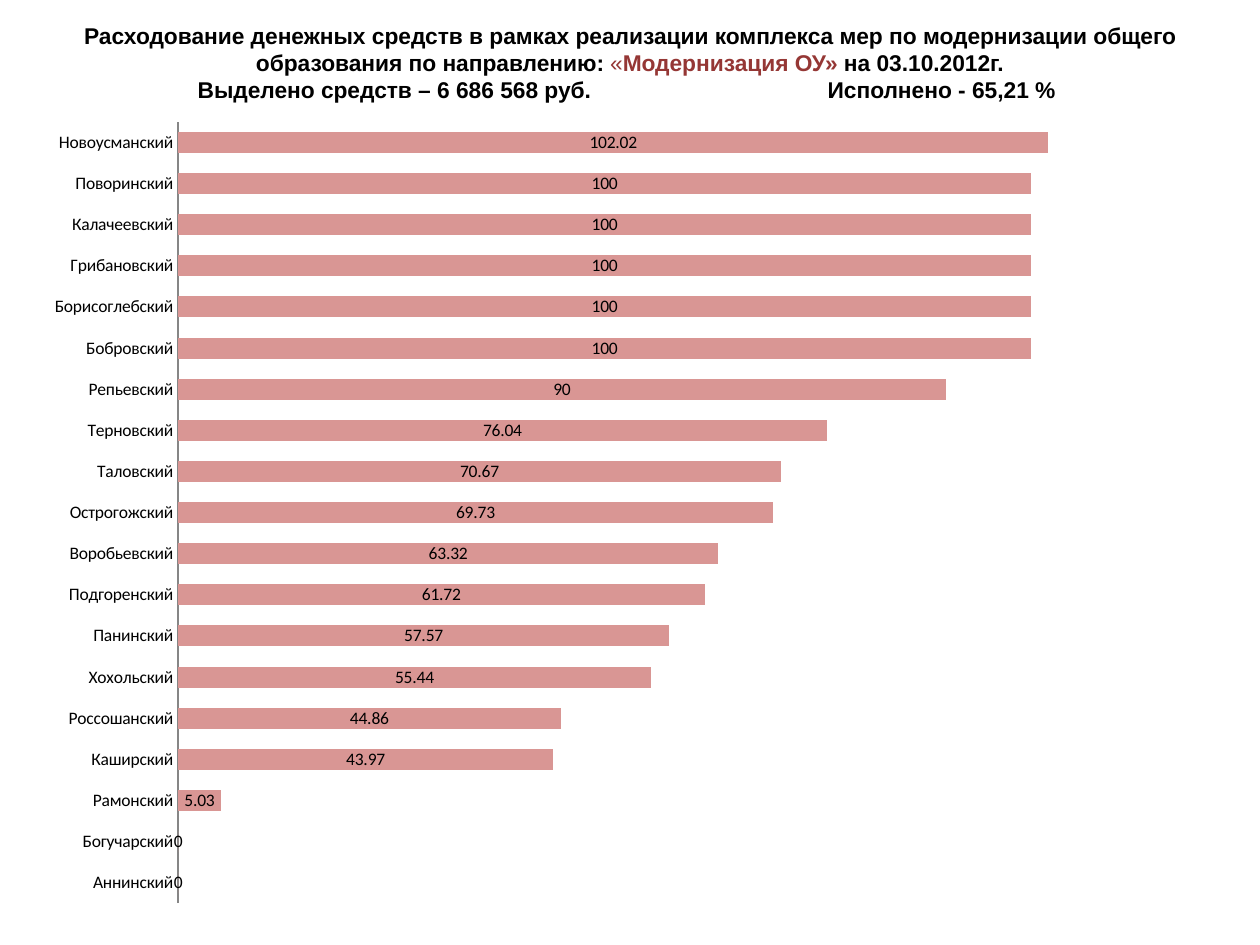
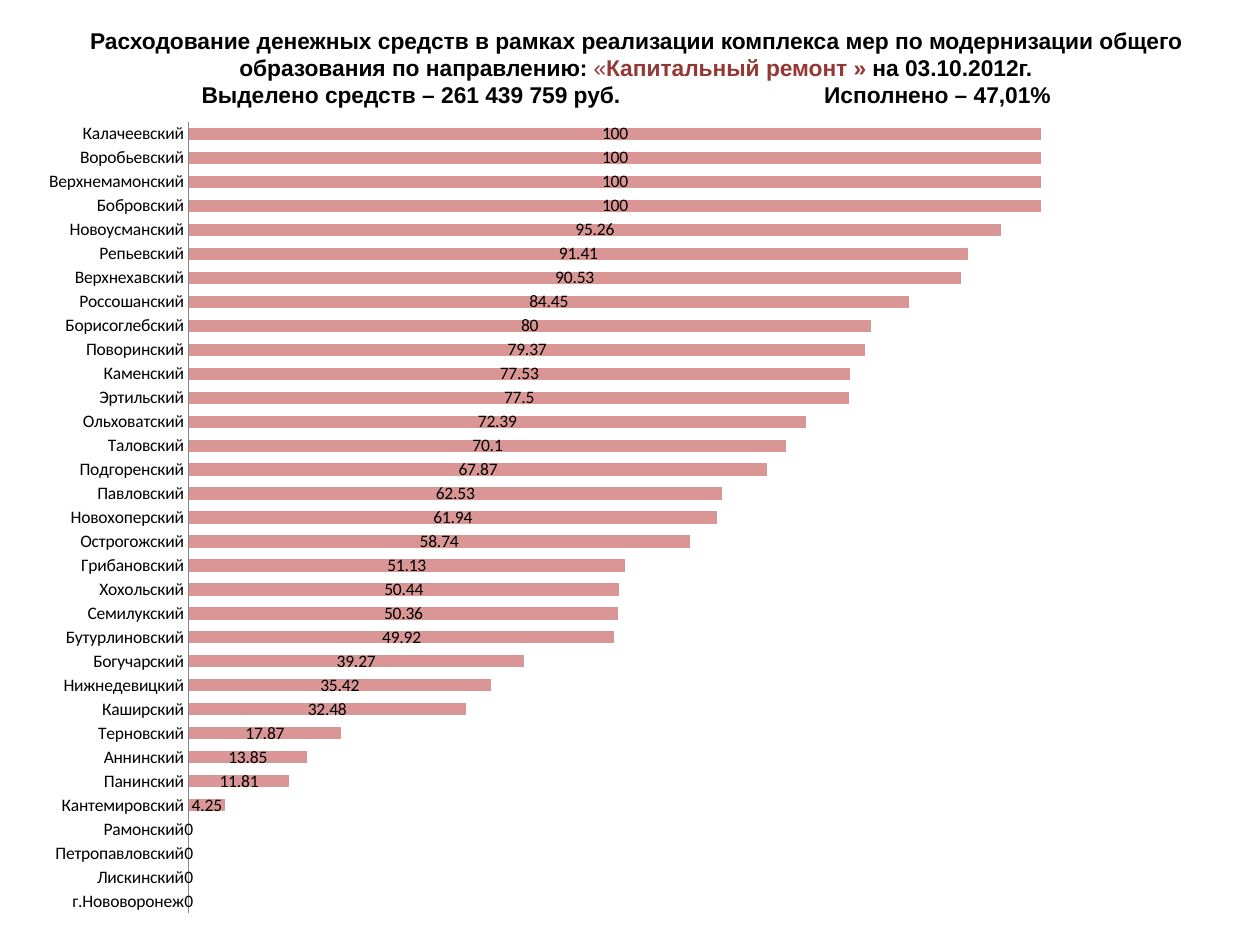
from dataclasses import dataclass

from lxml import etree
from pptx import Presentation
from pptx import util as u
from pptx.chart.data import CategoryChartData
from pptx.dml.color import RGBColor
from pptx.enum import chart as charts
from pptx.enum import text
from pptx.oxml.ns import qn

BLACK, ACCENT, BAR, AXIS = "000000", "953735", "D99694", "868686"
TITLE_FONT, CHART_FONT = "Arial", "Calibri"
TITLE_START = ("Расходование денежных средств в рамках реализации комплекса мер "
               "по модернизации общего образования по направлению: ")
TITLE_DATE = "на 03.10.2012г."
TITLE_ONLY = 5
AXIS_MAXIMUM = 120


@dataclass(frozen=True)
class Box:
    """Left, top, width and height in centimetres."""
    left: float
    top: float
    width: float
    height: float


@dataclass(frozen=True)
class SpendingSlide:
    direction: str
    allocated: str
    completed: str
    tabs: tuple[float, float]
    title_box: Box
    chart_box: Box
    plot_left: float
    plot_width: float
    districts: dict[str, float]


SLIDES = [
    SpendingSlide(
        "Модернизация ОУ» ", "Выделено средств – 6 686 568 руб.", "Исполнено - 65,21 %",
        (3.43, 16.13), Box(0.3, 0, 24.79, 2.51), Box(0.71, 2.13, 24, 16.41), 0.12, 0.86,
        {
            "Аннинский": 0, "Богучарский": 0, "Рамонский": 5.03, "Каширский": 43.97,
            "Россошанский": 44.86, "Хохольский": 55.44, "Панинский": 57.57,
            "Подгоренский": 61.72, "Воробьевский": 63.32, "Острогожский": 69.73,
            "Таловский": 70.67, "Терновский": 76.04, "Репьевский": 90,
            "Бобровский": 100, "Борисоглебский": 100, "Грибановский": 100,
            "Калачеевский": 100, "Поворинский": 100, "Новоусманский": 102.02,
        }),
    SpendingSlide(
        "Капитальный ремонт » ", "Выделено средств – 261 439 759 руб.", "Исполнено – 47,01%",
        (3.3, 15.85), Box(0.51, 0, 24.61, 2.72), Box(0.51, 2.13, 24.41, 16.61), 0.135, 0.845,
        {
            "г.Нововоронеж": 0, "Лискинский": 0, "Петропавловский": 0, "Рамонский": 0,
            "Кантемировский": 4.25, "Панинский": 11.81, "Аннинский": 13.85,
            "Терновский": 17.87, "Каширский": 32.48, "Нижнедевицкий": 35.42,
            "Богучарский": 39.27, "Бутурлиновский": 49.92, "Семилукский": 50.36,
            "Хохольский": 50.44, "Грибановский": 51.13, "Острогожский": 58.74,
            "Новохоперский": 61.94, "Павловский": 62.53, "Подгоренский": 67.87,
            "Таловский": 70.1, "Ольховатский": 72.39, "Эртильский": 77.5,
            "Каменский": 77.53, "Поворинский": 79.37, "Борисоглебский": 80,
            "Россошанский": 84.45, "Верхнехавский": 90.53, "Репьевский": 91.41,
            "Новоусманский": 95.26, "Бобровский": 100, "Верхнемамонский": 100,
            "Воробьевский": 100, "Калачеевский": 100,
        }),
]


def rgb(color: str) -> RGBColor:
    return RGBColor.from_string(color)


def lengths(box: Box) -> tuple:
    return u.Cm(box.left), u.Cm(box.top), u.Cm(box.width), u.Cm(box.height)


def format_font(font, *, name: str, size: float, color: str = BLACK, bold: bool = False) -> None:
    font.name, font.size, font.bold = name, u.Pt(size), bold
    font.color.rgb = rgb(color)


def add_text(paragraph, words: str, *, color: str = BLACK, bold: bool = True) -> None:
    run = paragraph.add_run()
    run.text = words
    format_font(run.font, name=TITLE_FONT, size=13, color=color, bold=bold)


def set_tabs(paragraph, positions: tuple[float, ...]) -> None:
    tab_list = etree.SubElement(paragraph._p.get_or_add_pPr(), qn("a:tabLst"))
    for position in positions:
        etree.SubElement(tab_list, qn("a:tab"), pos=str(u.Cm(position)), algn="l")


def fill_title(slide, content: SpendingSlide) -> None:
    title = slide.shapes.title
    title.left, title.top, title.width, title.height = lengths(content.title_box)
    frame = title.text_frame
    frame.auto_size = text.MSO_AUTO_SIZE.NONE
    frame.vertical_anchor = text.MSO_ANCHOR.MIDDLE

    heading = frame.paragraphs[0]
    heading.alignment = text.PP_ALIGN.CENTER
    add_text(heading, TITLE_START)
    add_text(heading, "«", color=ACCENT, bold=False)
    add_text(heading, content.direction, color=ACCENT)
    add_text(heading, TITLE_DATE)

    totals = frame.add_paragraph()
    totals.alignment = text.PP_ALIGN.LEFT
    set_tabs(totals, content.tabs)
    add_text(totals, f"\t{content.allocated}\t{content.completed}")


def place_plot(chart, **fractions: float) -> None:
    """Fix the inner plot area as fractions of the chart."""
    plot_area = chart._chartSpace.find(".//" + qn("c:plotArea"))
    for old_layout in plot_area.findall(qn("c:layout")):
        plot_area.remove(old_layout)
    layout = etree.Element(qn("c:layout"))
    manual = etree.SubElement(layout, qn("c:manualLayout"))
    settings = {"layoutTarget": "inner", "xMode": "edge", "yMode": "edge", **fractions}
    for tag, value in settings.items():
        etree.SubElement(manual, qn(f"c:{tag}"), val=str(value))
    plot_area.insert(0, layout)


def add_district_chart(slide, content: SpendingSlide) -> None:
    data = CategoryChartData()
    data.categories = content.districts.keys()
    data.add_series("Series 1", content.districts.values())
    chart = slide.shapes.add_chart(
        charts.XL_CHART_TYPE.BAR_STACKED, *lengths(content.chart_box), data).chart
    chart.has_legend = chart.has_title = False
    format_font(chart.font, name=CHART_FONT, size=10)
    place_plot(chart, x=content.plot_left, y=0.02, w=content.plot_width, h=0.96)

    districts, percents = chart.category_axis, chart.value_axis
    districts.major_tick_mark = districts.minor_tick_mark = charts.XL_TICK_MARK.NONE
    districts.has_major_gridlines = percents.has_major_gridlines = False
    districts.format.line.color.rgb = rgb(AXIS)
    districts.format.line.width = u.Pt(0.75)
    percents.minimum_scale, percents.maximum_scale = 0, AXIS_MAXIMUM
    percents.visible = False

    plot = chart.plots[0]
    plot.gap_width, plot.overlap = 95, 100
    plot.vary_by_categories = False
    fill = plot.series[0].format.fill
    fill.solid()
    fill.fore_color.rgb = rgb(BAR)
    plot.has_data_labels = True
    labels = plot.data_labels
    labels.show_value = True
    labels.position = charts.XL_LABEL_POSITION.CENTER
    format_font(labels.font, name=CHART_FONT, size=10)


def main() -> None:
    presentation = Presentation()
    presentation.slide_width, presentation.slide_height = u.Cm(25.4), u.Cm(19.05)
    for content in SLIDES:
        slide = presentation.slides.add_slide(presentation.slide_layouts[TITLE_ONLY])
        fill_title(slide, content)
        add_district_chart(slide, content)
    presentation.save("out.pptx")


if __name__ == "__main__":
    main()
